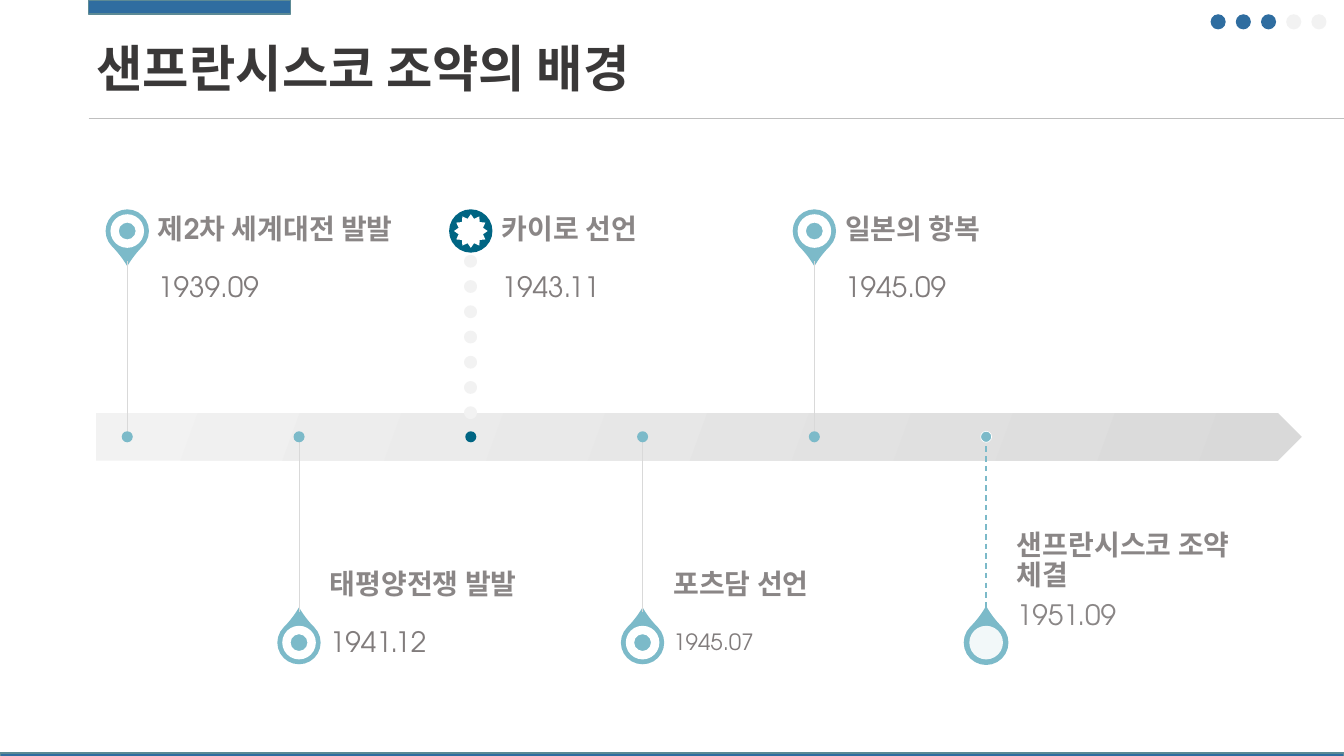
from dataclasses import dataclass

from lxml.etree import SubElement
from pptx import Presentation
from pptx.dml.color import RGBColor
from pptx.enum.dml import MSO_LINE as Dash
from pptx.enum.shapes import MSO_CONNECTOR as Connector, MSO_SHAPE as Shape
from pptx.enum.text import MSO_ANCHOR as Anchor, MSO_AUTO_SIZE as AutoSize
from pptx.oxml.ns import qn
from pptx.util import Inches, Pt


@dataclass(frozen=True)
class Theme:
    blue: str = "2F6DA0"
    blue_edge: str = "5C8A95"
    teal: str = "7CBAC9"
    deep: str = "006583"
    white: str = "FFFFFF"
    pale: str = "F2F2F2"
    silver: str = "D9D9D9"
    rule: str = "BFBFBF"
    title_ink: str = "3A3838"
    event_ink: str = "8A8686"
    date_ink: str = "817C7C"
    latin: str = "TeX Gyre Adventor"
    korean: str = "Noto Sans CJK KR"
    title_size: int = 36
    event_size: int = 20
    small_size: int = 16


# The grid has 160 columns and 90 rows of square cells
COLUMNS, ROWS, CELL = 160, 90, Inches(1 / 12)


def cells(count):
    return round(count * CELL)


def rgb(value):
    return RGBColor.from_string(value)


class Page:
    def __init__(self, deck, theme):
        self.theme = theme
        self.slide = deck.slides.add_slide(deck.slide_layouts[6])

    def shape(self, kind, left, top, width, height, fill, edge=None, weight=1, rotation=0):
        shape = self.slide.shapes.add_shape(kind, *map(cells, (left, top, width, height)))
        shape.shadow.inherit = False
        shape.rotation = rotation
        shape.fill.solid()
        shape.fill.fore_color.rgb = rgb(fill)
        if edge:
            shape.line.color.rgb = rgb(edge)
            shape.line.width = Pt(weight)
        else:
            shape.line.fill.background()
        return shape

    def centred(self, kind, x, y, size, fill, **style):
        return self.shape(kind, x - size / 2, y - size / 2, size, size, fill, **style)

    def line(self, x1, y1, x2, y2, color, weight, dash=None):
        line = self.slide.shapes.add_connector(
            Connector.STRAIGHT, *map(cells, (x1, y1, x2, y2)))
        line.line.color.rgb = rgb(color)
        line.line.width = Pt(weight)
        if dash:
            line.line.dash_style = dash
        if dash == Dash.ROUND_DOT:
            line.line._get_or_add_ln().set("cap", "rnd")
        SubElement(line._element.spPr, qn("a:effectLst"))

    def text(self, left, top, width, height, paragraphs, anchor=Anchor.TOP, insets=None):
        """Each paragraph is (text, size, color, bold, latin font)."""
        box = self.slide.shapes.add_textbox(*map(cells, (left, top, width, height)))
        frame = box.text_frame
        frame.word_wrap = True
        frame.vertical_anchor = anchor
        if insets:
            (frame.margin_left, frame.margin_top,
             frame.margin_right, frame.margin_bottom) = map(cells, insets)
        frame.text = "\n".join(entry[0] for entry in paragraphs)
        for para, (_, size, color, bold, latin) in zip(frame.paragraphs, paragraphs):
            for span in para.runs:
                span.font.size = Pt(size)
                span.font.bold = bold
                span.font.name = latin
                span.font.color.rgb = rgb(color)
                SubElement(span.font._element, qn("a:ea"), typeface=self.theme.korean)
        return frame

    def label(self, left, top, height, paragraphs, anchor, insets):
        frame = self.text(left, top, 33.84, height, paragraphs, anchor, insets)
        for para in frame.paragraphs:
            para.line_spacing = 0.9
            para.space_after = Pt(7)

    def arrow_band(self, left, top, width, height):
        band = self.shape(Shape.PENTAGON, left, top, width, height, self.theme.pale)
        band.fill.gradient()
        band.fill.gradient_angle = 340
        for stop, color in zip(band.fill.gradient_stops, (self.theme.pale, self.theme.silver)):
            stop.color.rgb = rgb(color)

    def pin(self, x, y, above, kind):
        theme = self.theme
        if kind == "star":
            self.centred(Shape.OVAL, x, y, 5.16, theme.deep)
            self.centred(Shape.STAR_12_POINT, x, y, 4, theme.white)
            return
        final = kind == "final"
        drop = self.centred(Shape.TEAR, x, y, 5.16, theme.teal,
                            edge=theme.teal if final else None,
                            rotation=135 if above else 315)
        drop.adjustments[0] = 1.15
        inner = self.centred(Shape.OVAL if final else Shape.DONUT, x, y, 4, theme.white)
        if final:
            color = inner.fill._xPr.find(qn("a:solidFill"))[0]
            SubElement(color, qn("a:alpha"), val="90000")

    def event(self, x, above, name, date, kind="plain", date_size=None):
        theme = self.theme
        side = -1 if above else 1
        stem_end = AXIS + side * STEM
        # Pin, stem and mark on the axis
        self.pin(x, AXIS + side * 24.5, above, kind)
        stem = {"plain": (theme.silver, 0.25),
                "star": (theme.pale, 9, Dash.ROUND_DOT),
                "final": (theme.teal, 1, Dash.DASH)}[kind]
        self.line(x, min(AXIS, stem_end), x, max(AXIS, stem_end), *stem)
        self.centred(Shape.OVAL, x, AXIS, 1.32, theme.deep if kind == "star" else theme.teal,
                     edge=theme.white if kind == "final" else None, weight=0.5)
        # Name and date, beside the pin and beside the stem
        title = (name, theme.event_size, theme.event_ink, True, theme.latin)
        when = (date, date_size or theme.event_size, theme.date_ink, False, theme.latin)
        left, middle = x + 3.66, (Anchor.MIDDLE, (0, 0, 1.68, 0))
        if kind == "final":
            when = (date, theme.event_size, theme.event_ink, False, theme.latin)
            self.label(left, stem_end - HEAD, HEAD, [title, when], *middle)
        elif above:
            self.label(left, stem_end, STEM, [when], Anchor.TOP, (0, 1.68, 1.68, 2.52))
            self.label(left, stem_end - HEAD, HEAD, [title], *middle)
        else:
            self.label(left, AXIS, STEM, [title], Anchor.BOTTOM, (0, 2.52, 0, 1.68))
            self.label(left, stem_end, HEAD, [when], *middle)


# Timeline measures, in cells
AXIS, STEM, HEAD = 52, 20.9, 7.32
FIRST_EVENT, EVENT_STEP = 15.15, 20.45


def main():
    theme = Theme()
    deck = Presentation()
    deck.slide_width, deck.slide_height = cells(COLUMNS), cells(ROWS)
    page = Page(deck, theme)

    # Frame and title
    page.shape(Shape.RECTANGLE, 10.56, 0, 24, 1.68, theme.blue, theme.blue_edge)
    page.shape(Shape.RECTANGLE, 0, 89.64, COLUMNS, 0.6, theme.blue, theme.blue_edge)
    title = page.text(10.32, 3.84, 73.32, 8.52, [
        ("샌프란시스코 조약의 배경", theme.title_size, theme.title_ink, True, theme.korean)])
    title.word_wrap = False
    title.auto_size = AutoSize.SHAPE_TO_FIT_TEXT
    page.line(10.56, 14.04, COLUMNS, 14.04, theme.rule, 0.5)

    # Progress dots
    for index in range(5):
        page.shape(Shape.OVAL, 144.12 + 3 * index, 1.7, 1.8, 1.8,
                   theme.blue if index < 3 else theme.pale)

    # Timeline, with events above and below in turn
    page.arrow_band(11.4, 49.2, 143.52, 5.64)
    events = [
        ("제2차 세계대전 발발", "1939.09"),
        ("태평양전쟁 발발", "1941.12"),
        ("카이로 선언", "1943.11", "star"),
        ("포츠담 선언", "1945.07", "plain", theme.small_size),
        ("일본의 항복", "1945.09"),
        ("샌프란시스코 조약 체결", "1951.09", "final"),
    ]
    for index, event in enumerate(events):
        page.event(FIRST_EVENT + index * EVENT_STEP, index % 2 == 0, *event)

    deck.save("out.pptx")


if __name__ == "__main__":
    main()
